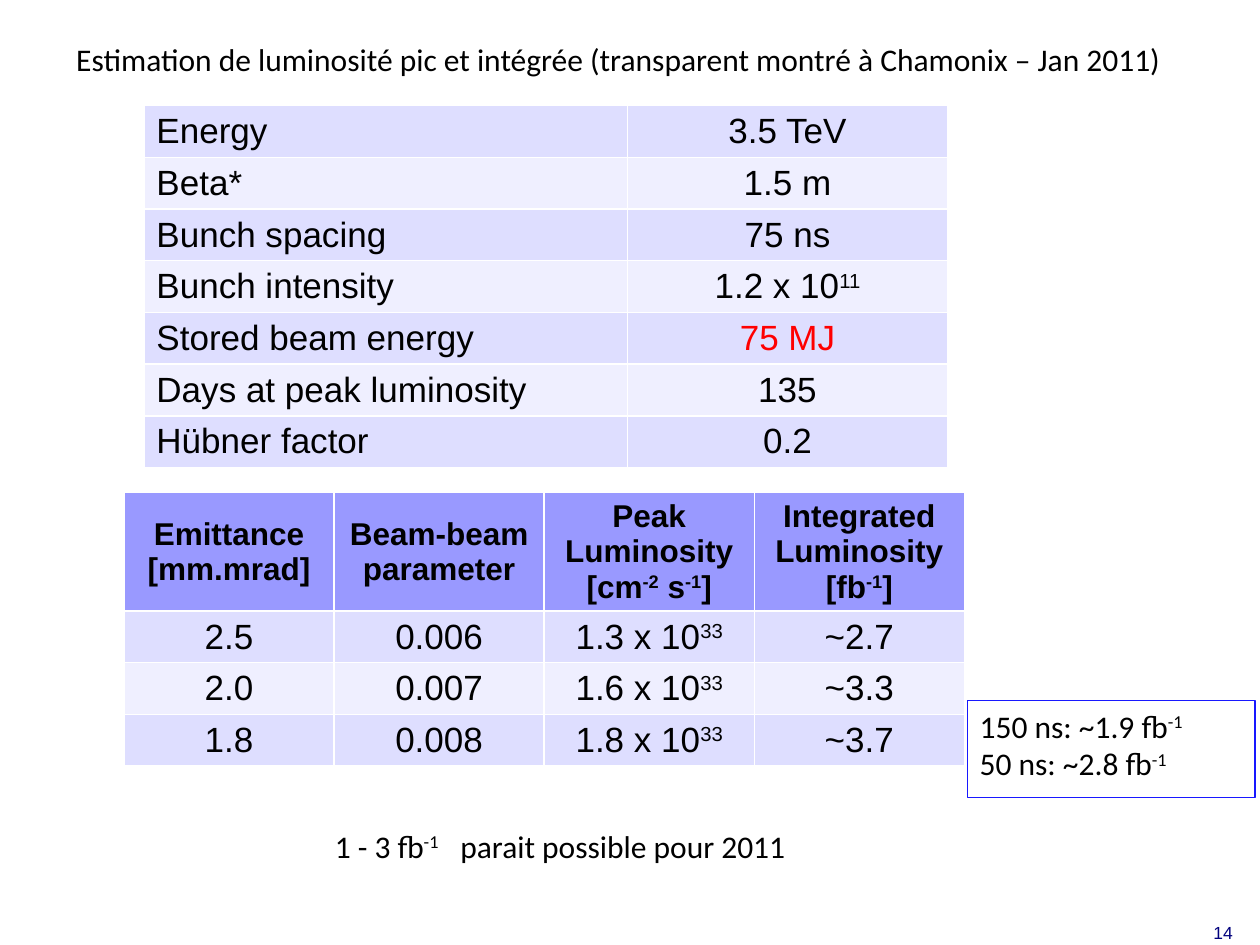
from pptx import Presentation
from pptx.dml.color import RGBColor
from pptx.enum.shapes import MSO_SHAPE as Shape
from pptx.enum.text import MSO_ANCHOR as Anchor, PP_ALIGN as Align
from pptx.util import Cm, Pt
from lxml import etree

COLORS = {
    "text": "000000",
    "alert": "FF0000",
    "number": "00007D",
    "outline": "1818FF",
    "header": "9999FF",
    "odd": "DEDEFF",
    "even": "EFEFFF",
}


def write(frame, text, size, font="Calibri", color="text", align=Align.LEFT, bold=False):
    """Write lines of text; parts between ^ marks are superscript."""
    frame.text = text.replace("^", "")
    for para, line in zip(frame.paragraphs, text.split("\n")):
        para.alignment = align
        para.text = ""
        for index, part in enumerate(line.split("^")):
            if not part:
                continue
            span = para.add_run()
            span.text = part
            span.font.name = font
            span.font.size = Pt(size)
            span.font.bold = bold
            span.font.color.rgb = RGBColor.from_string(COLORS[color])
            if index % 2:
                span._r.get_or_add_rPr().set("baseline", "30000")


def fill_cell(cell, color):
    cell.fill.solid()
    cell.fill.fore_color.rgb = RGBColor.from_string(COLORS[color])


deck = Presentation()
deck.slide_width, deck.slide_height = Cm(25.4), Cm(19.05)
page = deck.slides.add_slide(deck.slide_layouts[5])

title = page.shapes.title
title.left, title.top, title.width, title.height = Cm(1.04), Cm(0.46), Cm(22.86), Cm(1.45)
write(title.text_frame,
      "Estimation de luminosité pic et intégrée (transparent montré à Chamonix – Jan 2011)",
      18, align=Align.CENTER)
title.text_frame.vertical_anchor = Anchor.MIDDLE

parameters = [
    ("Energy", "3.5 TeV"),
    ("Beta*", "1.5 m"),
    ("Bunch spacing", "75 ns"),
    ("Bunch intensity", "1.2 x 10^11^"),
    ("Stored beam energy", "75 MJ"),
    ("Days at peak luminosity", "135"),
    ("Hübner factor", "0.2"),
]
row_height = Cm(1.04)
table = page.shapes.add_table(len(parameters), 2, Cm(2.9), Cm(2.13),
                              Cm(16.2), row_height * len(parameters)).table
table.first_row = False
table.columns[0].width, table.columns[1].width = Cm(9.75), Cm(6.45)
for row, (label, value) in enumerate(parameters):
    name_cell, value_cell = table.cell(row, 0), table.cell(row, 1)
    write(name_cell.text_frame, label, 20, "Arial")
    write(value_cell.text_frame, value, 20, "Arial",
          "alert" if value == "75 MJ" else "text", Align.CENTER)
    value_cell.vertical_anchor = Anchor.MIDDLE
    for cell in (name_cell, value_cell):
        fill_cell(cell, "even" if row % 2 else "odd")

luminosities = [
    ("Emittance\n[mm.mrad]", "Beam-beam parameter",
     "Peak Luminosity\n[cm^-2^ s^-1^]", "Integrated Luminosity\n[fb^-1^]"),
    ("2.5", "0.006", "1.3 x 10^33^", "~2.7"),
    ("2.0", "0.007", "1.6 x 10^33^", "~3.3"),
    ("1.8", "0.008", "1.8 x 10^33^", "~3.7"),
]
header_height = Cm(2.36)
table = page.shapes.add_table(4, 4, Cm(2.5), Cm(9.93), Cm(16.94),
                              header_height + 3 * row_height).table
for row, values in enumerate(luminosities):
    is_header = row == 0
    table.rows[row].height = header_height if is_header else row_height
    for column, value in enumerate(values):
        cell = table.cell(row, column)
        write(cell.text_frame, value, 18 if is_header else 20, "Arial",
              align=Align.CENTER, bold=is_header)
        if is_header:
            cell.vertical_anchor = Anchor.MIDDLE
        fill_cell(cell, "header" if is_header else "odd" if row % 2 else "even")

spacing_box = page.shapes.add_shape(Shape.RECTANGLE, Cm(19.5), Cm(14.12), Cm(5.8), Cm(1.96))
spacing_box.shadow.inherit = False
spacing_box.fill.background()
spacing_box.line.color.rgb = RGBColor.from_string(COLORS["outline"])
spacing_box.line.width = Pt(0.75)
write(spacing_box.text_frame, "150 ns: ~1.9 fb^-1^\n50 ns: ~2.8 fb^-1^", 18)
spacing_box.text_frame.vertical_anchor = Anchor.TOP

conclusion = page.shapes.add_textbox(Cm(6.5), Cm(16.54), Cm(9.91), Cm(1.02))
conclusion.text_frame.word_wrap = True
write(conclusion.text_frame, "1 - 3 fb^-1^\tparait possible pour 2011", 18)
properties = conclusion.text_frame.paragraphs[0]._p.get_or_add_pPr()
namespace = etree.QName(properties).namespace
tabs = etree.SubElement(properties, f"{{{namespace}}}tabLst")
etree.SubElement(tabs, f"{{{namespace}}}tab", pos=str(Cm(2.53)), algn="l")

number = page.shapes.add_textbox(Cm(19.18), Cm(18.42), Cm(5.92), Cm(0.71))
number.text_frame.word_wrap = True
number.text_frame.vertical_anchor = Anchor.BOTTOM
write(number.text_frame, "14", 10, "Arial", "number", Align.RIGHT)

deck.save("out.pptx")
